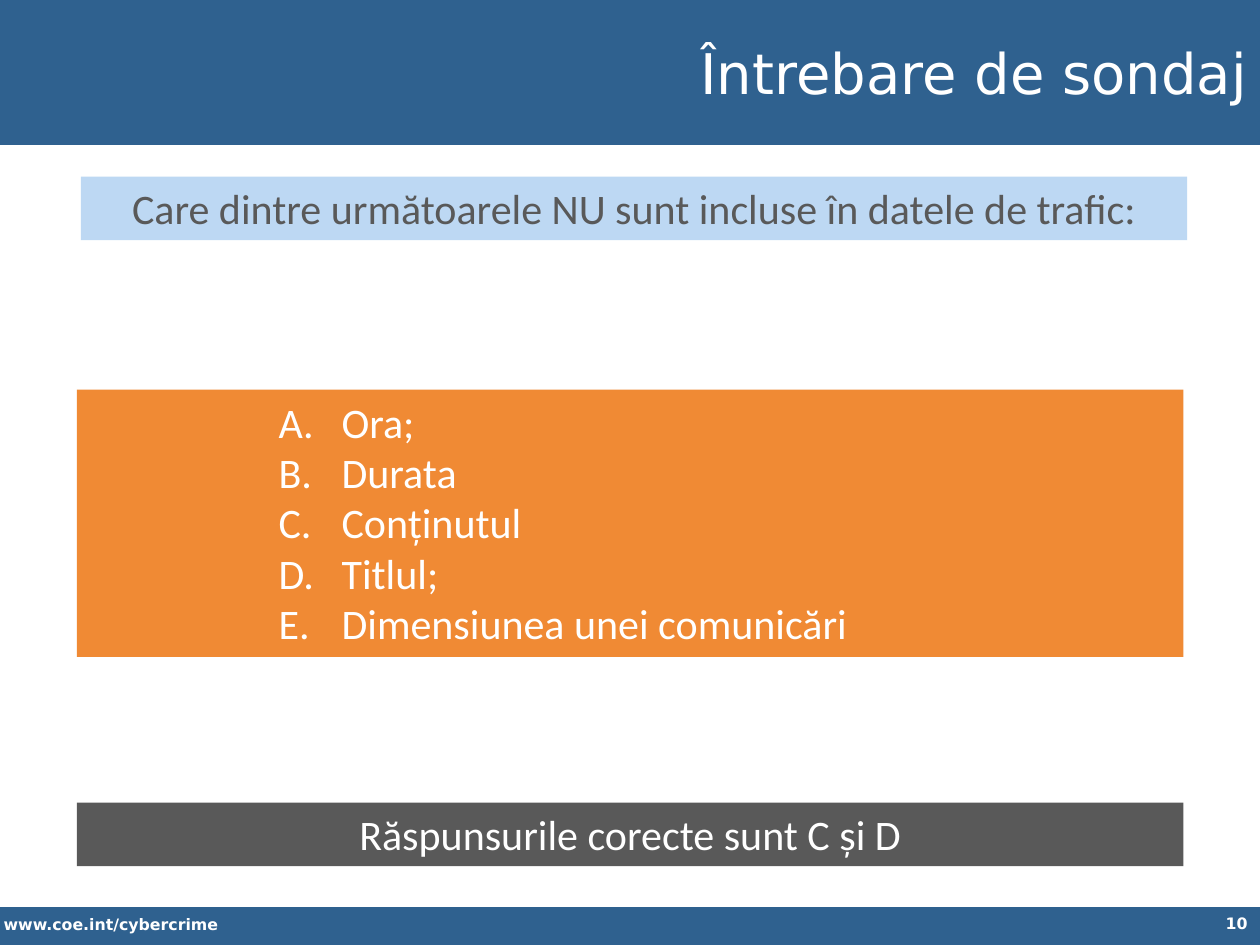
"""Build the poll question slide on traffic data."""
from lxml.etree import SubElement
from pptx import Presentation
from pptx.dml.color import RGBColor
from pptx.enum.shapes import MSO_SHAPE
from pptx.enum.text import MSO_ANCHOR, MSO_AUTO_SIZE, PP_ALIGN
from pptx.oxml.ns import qn
from pptx.util import Pt

BLUE = RGBColor(0x2F, 0x61, 0x8F)
PALE = RGBColor(0xBD, 0xD8, 0xF3)
ORANGE = RGBColor(0xF0, 0x8A, 0x34)
GRAY = RGBColor(0x59, 0x59, 0x59)
WHITE = RGBColor(0xFF, 0xFF, 0xFF)


def add_bar(left, top, width, height, fill):
    bar = slide.shapes.add_shape(
        MSO_SHAPE.RECTANGLE, Pt(left), Pt(top), Pt(width), Pt(height))
    bar.shadow.inherit = False
    bar.fill.solid()
    bar.fill.fore_color.rgb = fill
    bar.line.fill.background()
    return bar


def set_text(shape, text, align, font, size, color, anchor=MSO_ANCHOR.TOP):
    frame = shape.text_frame
    frame.text = text
    frame.word_wrap = True
    frame.auto_size = MSO_AUTO_SIZE.NONE
    frame.vertical_anchor = anchor
    for para in frame.paragraphs:
        para.alignment = align
        para.space_before = Pt(0)
        for run in para.runs:
            run.font.name = font
            run.font.size = Pt(size)
            run.font.color.rgb = color


deck = Presentation()
deck.slide_width, deck.slide_height = Pt(720), Pt(540)
slide = deck.slides.add_slide(deck.slide_layouts[1])
title, body = slide.placeholders

add_bar(0, 0, 720, 82.8, BLUE)
add_bar(0, 518.4, 720, 21.6, BLUE)

for left, top, width, text, align in [
    (-5, 519.1, 253.4, "www.coe.int/cybercrime", PP_ALIGN.LEFT),
    (558, 518.4, 162, "10", PP_ALIGN.RIGHT),
]:
    note = slide.shapes.add_textbox(Pt(left), Pt(top), Pt(width), Pt(18))
    set_text(note, text, align, "DejaVu Sans", 9, WHITE)
    note.text_frame.paragraphs[0].runs[0].font.bold = True

title.left, title.top, title.width, title.height = Pt(561.6 - 403.2), Pt(5), Pt(561.6), Pt(72.7)
title.fill.solid()
title.fill.fore_color.rgb = BLUE
set_text(title, "Întrebare de sondaj", PP_ALIGN.RIGHT, "DejaVu Sans", 32, WHITE,
         MSO_ANCHOR.MIDDLE)
title.element.getparent().append(title.element)

for left, top, fill, color, text in [
    (46.2, 101, PALE, GRAY, "Care dintre următoarele NU sunt incluse în datele de trafic:"),
    (44, 458.6, GRAY, WHITE, "Răspunsurile corecte sunt C și D"),
]:
    bar = add_bar(left, top, 632.2, 36.3, fill)
    set_text(bar, text, PP_ALIGN.CENTER, "Calibri", 24, color)

body.left, body.top, body.width, body.height = Pt(44), Pt(222.7), Pt(632.2), Pt(152.7)
body.fill.solid()
body.fill.fore_color.rgb = ORANGE
items = ["Ora;", "Durata", "Conținutul", "Titlul;", "Dimensiunea unei comunicări"]
set_text(body, "\n".join(items), PP_ALIGN.LEFT, "Calibri", 24, WHITE)
for para in body.text_frame.paragraphs:
    para.level = 3
    props = para._p.get_or_add_pPr()
    props.set("marL", str(Pt(144)))
    props.set("indent", str(-Pt(36)))
    SubElement(props, qn("a:buFont"), typeface="Calibri")
    SubElement(props, qn("a:buAutoNum"), type="alphaUcPeriod")

deck.save("out.pptx")
